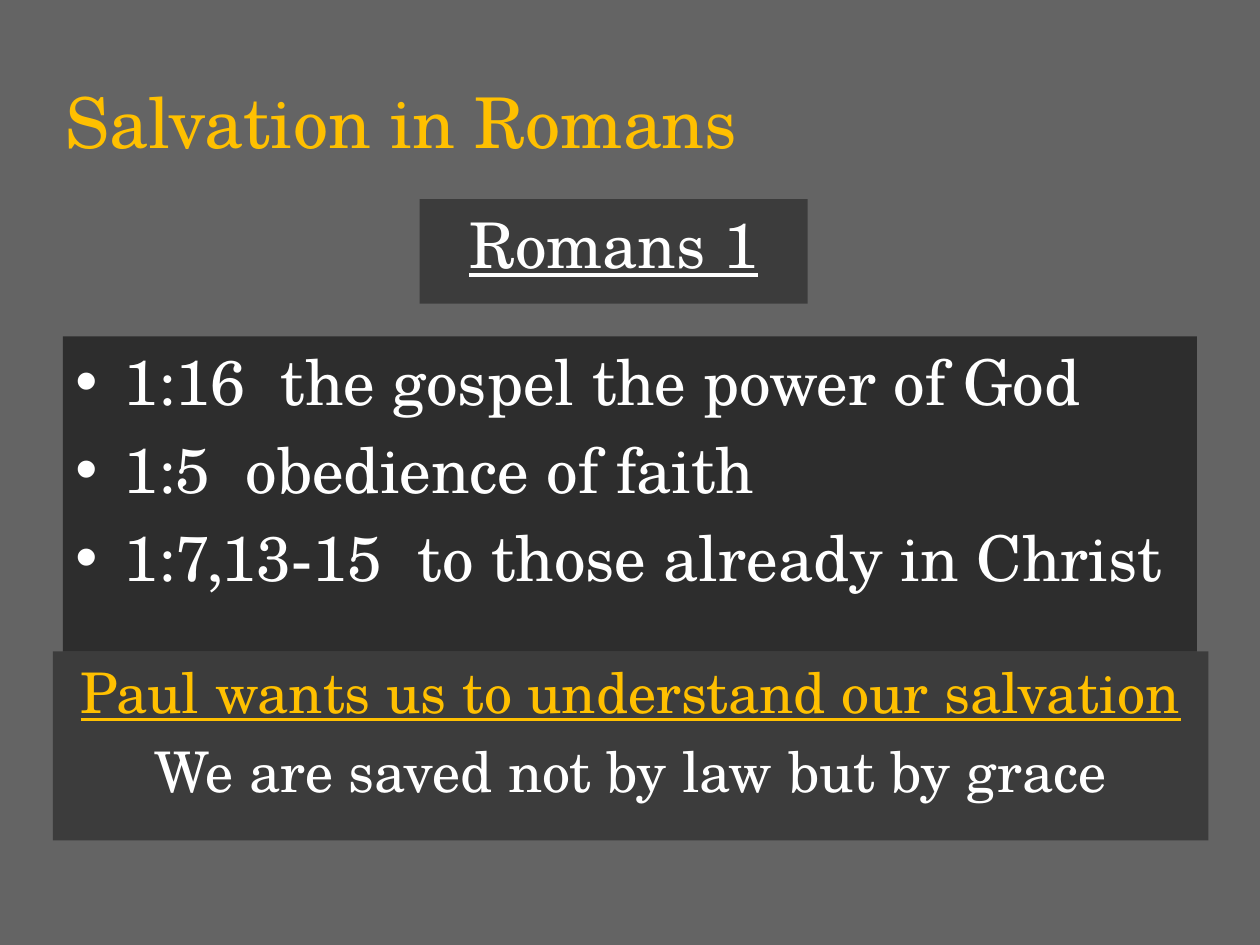
from lxml import etree
from pptx import Presentation
from pptx.dml.color import RGBColor
from pptx.enum.shapes import MSO_SHAPE
from pptx.enum.text import MSO_ANCHOR, MSO_AUTO_SIZE, PP_ALIGN
from pptx.oxml.ns import qn
from pptx.util import Inches, Pt

COLORS = {"background": "646464", "panel": "000000", "gold": "FFC000", "white": "FFFFFF"}
FONT = "TeX Gyre Schola"


def style_paragraph(paragraph, text, size, color, alignment, underline=False):
    paragraph.text = text
    paragraph.alignment = alignment
    paragraph.font.name = FONT
    paragraph.font.size = Pt(size)
    paragraph.font.underline = underline
    paragraph.font.color.rgb = RGBColor.from_string(COLORS[color])


def add_panel(left, top, width, height, opacity, size, lines, bulleted=False):
    """Add a translucent black panel holding (text, color, underline) lines."""
    panel = slide.shapes.add_shape(
        MSO_SHAPE.RECTANGLE, Inches(left), Inches(top), Inches(width), Inches(height))
    panel.shadow.inherit = False
    panel.line.fill.background()
    panel.fill.solid()
    panel.fill.fore_color.rgb = RGBColor.from_string(COLORS["panel"])
    fill_color = panel.fill._xPr.find(qn("a:solidFill"))[0]
    etree.SubElement(fill_color, qn("a:alpha"), val=str(opacity * 1000))

    frame = panel.text_frame
    frame.word_wrap = True
    frame.vertical_anchor = MSO_ANCHOR.TOP
    for index, (text, color, underline) in enumerate(lines):
        paragraph = frame.add_paragraph() if index else frame.paragraphs[0]
        if index:
            paragraph.space_before = Pt(size * 0.2)
        if bulleted:
            properties = paragraph._p.get_or_add_pPr()
            properties.set("marL", str(Inches(0.38)))
            properties.set("indent", str(-Inches(0.38)))
            etree.SubElement(properties, qn("a:buFont"), typeface="Arial")
            etree.SubElement(properties, qn("a:buChar"), char="•")
        alignment = PP_ALIGN.LEFT if bulleted else PP_ALIGN.CENTER
        style_paragraph(paragraph, text, size, color, alignment, underline)


presentation = Presentation()
presentation.slide_width = Inches(10)
presentation.slide_height = Inches(7.5)
slide = presentation.slides.add_slide(presentation.slide_layouts[5])
slide.background.fill.solid()
slide.background.fill.fore_color.rgb = RGBColor.from_string(COLORS["background"])

title = slide.shapes.title
title.left, title.top = Inches(0.42), Inches(0.33)
title.width, title.height = Inches(6.58), Inches(1.25)
title.text_frame.auto_size = MSO_AUTO_SIZE.NONE
title.text_frame.vertical_anchor = MSO_ANCHOR.MIDDLE
style_paragraph(title.text_frame.paragraphs[0], "Salvation in Romans", 40, "gold", PP_ALIGN.LEFT)

verses = [
    "1:16  the gospel the power of God",
    "1:5  obedience of faith",
    "1:7,13-15  to those already in Christ",
]
add_panel(0.5, 2.67, 9, 2.5, 55, 36,
          [(verse, "white", False) for verse in verses], bulleted=True)
add_panel(3.33, 1.58, 3.08, 0.83, 40, 36, [("Romans 1", "white", True)])
add_panel(0.42, 5.17, 9.17, 1.5, 40, 32, [
    ("Paul wants us to understand our salvation", "gold", True),
    ("We are saved not by law but by grace", "white", False),
])

presentation.save("out.pptx")
